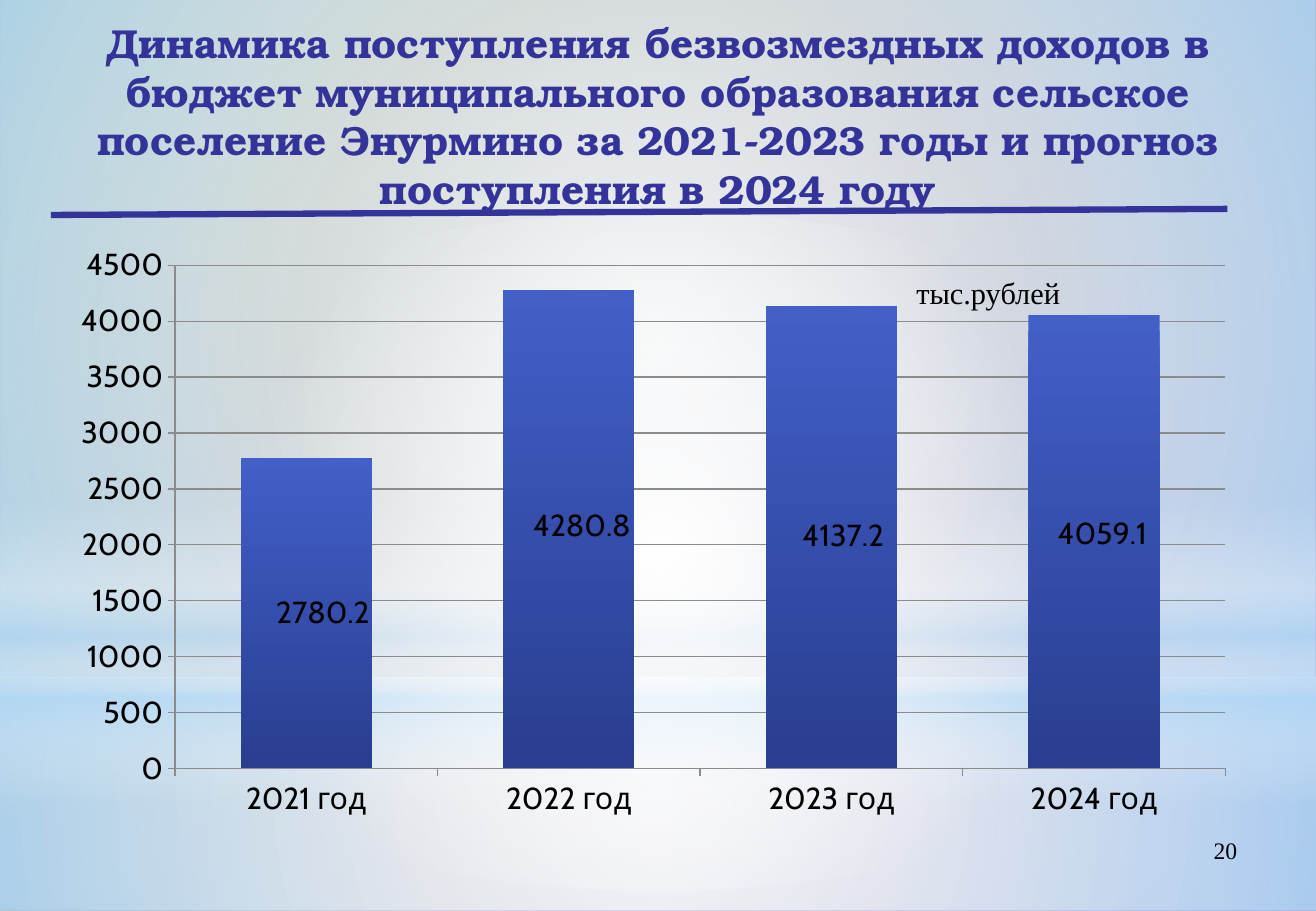
from lxml import etree
from pptx import Presentation
from pptx.chart.data import CategoryChartData
from pptx.dml.color import RGBColor
from pptx.enum.chart import XL_CHART_TYPE as ChartType, XL_TICK_MARK as Tick
from pptx.enum.shapes import MSO_CONNECTOR as Connector, MSO_SHAPE as Shape
from pptx.enum.text import MSO_ANCHOR as Anchor, PP_ALIGN as Align
from pptx.oxml import parse_xml
from pptx.oxml.ns import nsdecls, qn
from pptx.util import Inches, Pt

COLORS = {
    "title": "333399", "text": "000000", "grid": "8B8B8B",
    "bar_top": "435FC8", "bar_bottom": "293E90",
    "back_start": "96AB94", "back_end": "8488C4",
    "white": "FFFFFF", "sky": "B4DCFA",
}
WIDTH, HEIGHT = 10.84, 7.5
HORIZON = 5.58
SERIF = "Times New Roman"
CENTER_PATH = ('<a:path path="circle"><a:fillToRect l="50000" t="50000" '
               'r="50000" b="50000"/></a:path>')
DOWNWARD = '<a:lin ang="5400000" scaled="0"/>'

TITLE = ("Динамика поступления безвозмездных доходов в бюджет муниципального "
         "образования сельское поселение Энурмино за 2021-2023 годы и прогноз "
         "поступления в 2024 году")
INCOME = {"2021 год": 2780.2, "2022 год": 4280.8,
          "2023 год": 4137.2, "2024 год": 4059.1}
# Label shifts from the bar centre, as fractions of the chart size
LABEL_SHIFTS = [(0.014, 0), (0.011, -0.005), (0.01, -0.003), (0.007, -0.013)]


def rgb(name):
    return RGBColor.from_string(COLORS[name])


def inches(*lengths):
    return [Inches(length) for length in lengths]


def set_two_tone(fill, start, end, angle):
    fill.gradient()
    fill.gradient_angle = angle
    for stop, name in zip(fill.gradient_stops, (start, end)):
        stop.color.rgb = rgb(name)


def add_glow(page, kind, box, stops, direction):
    """Shape with a gradient of (position, colour, opacity) stops."""
    glow = page.shapes.add_shape(kind, *inches(*box))
    glow.shadow.inherit = False
    glow.line.fill.background()
    stop_xml = "".join(
        f'<a:gs pos="{position * 1000}"><a:srgbClr val="{COLORS[name]}">'
        f'<a:alpha val="{opacity * 1000}"/></a:srgbClr></a:gs>'
        for position, name, opacity in stops)
    gradient = parse_xml(f'<a:gradFill {nsdecls("a")} rotWithShape="1">'
                         f'<a:gsLst>{stop_xml}</a:gsLst>{direction}</a:gradFill>')
    glow._element.spPr.find(qn("a:prstGeom")).addnext(gradient)


def add_backdrop(page):
    set_two_tone(page.background.fill, "back_start", "back_end", 315)
    add_glow(page, Shape.RECTANGLE, (0, HORIZON, WIDTH, HEIGHT - HORIZON),
             [(0, "white", 91), (37, "white", 76), (100, "sky", 79)], CENTER_PATH)
    add_glow(page, Shape.RECTANGLE, (0, 0, WIDTH, HORIZON),
             [(0, "white", 89), (48, "white", 62), (100, "sky", 79)], CENTER_PATH)
    add_glow(page, Shape.RECTANGLE, (0, 4.12, WIDTH, 2.5),
             [(0, "white", 0), (29, "white", 30), (45, "sky", 40),
              (55, "white", 26), (65, "sky", 60), (100, "white", 0)], DOWNWARD)
    add_glow(page, Shape.OVAL, (0, 1.75, WIDTH, HORIZON),
             [(0, "white", 100), (56, "white", 0)], CENTER_PATH)


def add_text(page, box, text, size, font=SERIF, color="text",
             align=Align.LEFT, anchor=Anchor.TOP, bold=False):
    frame = page.shapes.add_textbox(*inches(*box)).text_frame
    frame.word_wrap = True
    frame.vertical_anchor = anchor
    para = frame.paragraphs[0]
    para.text = text
    para.alignment = align
    para.font.size, para.font.name, para.font.bold = Pt(size), font, bold
    para.font.color.rgb = rgb(color)


def add_heading(page, box):
    left, top, width, height = box
    add_text(page, box, TITLE, 24, "TeX Gyre Bonum", "title",
             Align.CENTER, Anchor.MIDDLE, True)
    # Slightly tilted rule under the title
    bottom = top + height
    rule = page.shapes.add_connector(
        Connector.STRAIGHT,
        *inches(left - 0.08, bottom + 0.02, left + width - 0.23, bottom - 0.03))
    rule.line.color.rgb = rgb("title")
    rule.line.width = Pt(3.75)
    etree.SubElement(rule._element.spPr, qn("a:effectLst"))


def manual_layout(**values):
    parts = "".join(f'<c:{key} val="{value}"/>' for key, value in values.items())
    return parse_xml(f'<c:layout {nsdecls("c")}><c:manualLayout>{parts}'
                     '</c:manualLayout></c:layout>')


def add_income_chart(page, box):
    data = CategoryChartData(number_format="0.0")
    data.categories = list(INCOME)
    data.add_series("Безвозмездные доходы", list(INCOME.values()))
    chart = page.shapes.add_chart(ChartType.COLUMN_STACKED, *inches(*box), data).chart
    chart.has_legend = chart.has_title = False
    chart.font.name, chart.font.size = "Cabin", Pt(18)
    chart.font.color.rgb = rgb("text")

    # Axes and grid
    values = chart.value_axis
    values.minimum_scale, values.maximum_scale, values.major_unit = 0, 4500, 500
    values.tick_labels.number_format = "0"
    values.tick_labels.number_format_is_linked = False
    values.has_major_gridlines = True
    for axis in (values, chart.category_axis):
        axis.major_tick_mark = Tick.OUTSIDE
        axis.minor_tick_mark = Tick.NONE
    for line in (values.major_gridlines.format.line, values.format.line,
                 chart.category_axis.format.line):
        line.color.rgb = rgb("grid")
        line.width = Pt(0.75)

    # Bars
    plot = chart.plots[0]
    plot.gap_width, plot.overlap = 100, 100
    plot.vary_by_categories = False
    series = plot.series[0]
    set_two_tone(series.format.fill, "bar_top", "bar_bottom", 270)

    # Value labels
    labels = series.data_labels
    labels.show_value = True
    labels.number_format, labels.number_format_is_linked = "0.0", False
    for index, (x, y) in enumerate(LABEL_SHIFTS):
        label = series.points[index].data_label
        label.font.size = Pt(18)
        label.font.name = "Cabin"
        label.font.color.rgb = rgb("text")
        node = labels._element.findall(qn("c:dLbl"))[index]
        node.find(qn("c:idx")).addnext(manual_layout(x=x, y=y))

    # Plot area
    area = chart._chartSpace.find(".//" + qn("c:plotArea"))
    for old in area.findall(qn("c:layout")):
        area.remove(old)
    area.insert(0, manual_layout(layoutTarget="inner", xMode="edge", yMode="edge",
                                 x=0.099, y=0.05, w=0.882, h=0.849))


def main():
    deck = Presentation()
    deck.slide_width, deck.slide_height = inches(WIDTH, HEIGHT)
    page = deck.slides.add_slide(deck.slide_layouts[6])
    add_backdrop(page)
    add_text(page, (7.76, 6.83, 2.53, 0.52), "20", 14, align=Align.RIGHT)
    add_heading(page, (0.5, 0.15, 9.84, 1.6))
    add_income_chart(page, (0.47, 1.94, 9.81, 4.88))
    add_text(page, (7.45, 2.21, 1.4, 0.4), "тыс.рублей", 18)
    deck.save("out.pptx")


if __name__ == "__main__":
    main()
